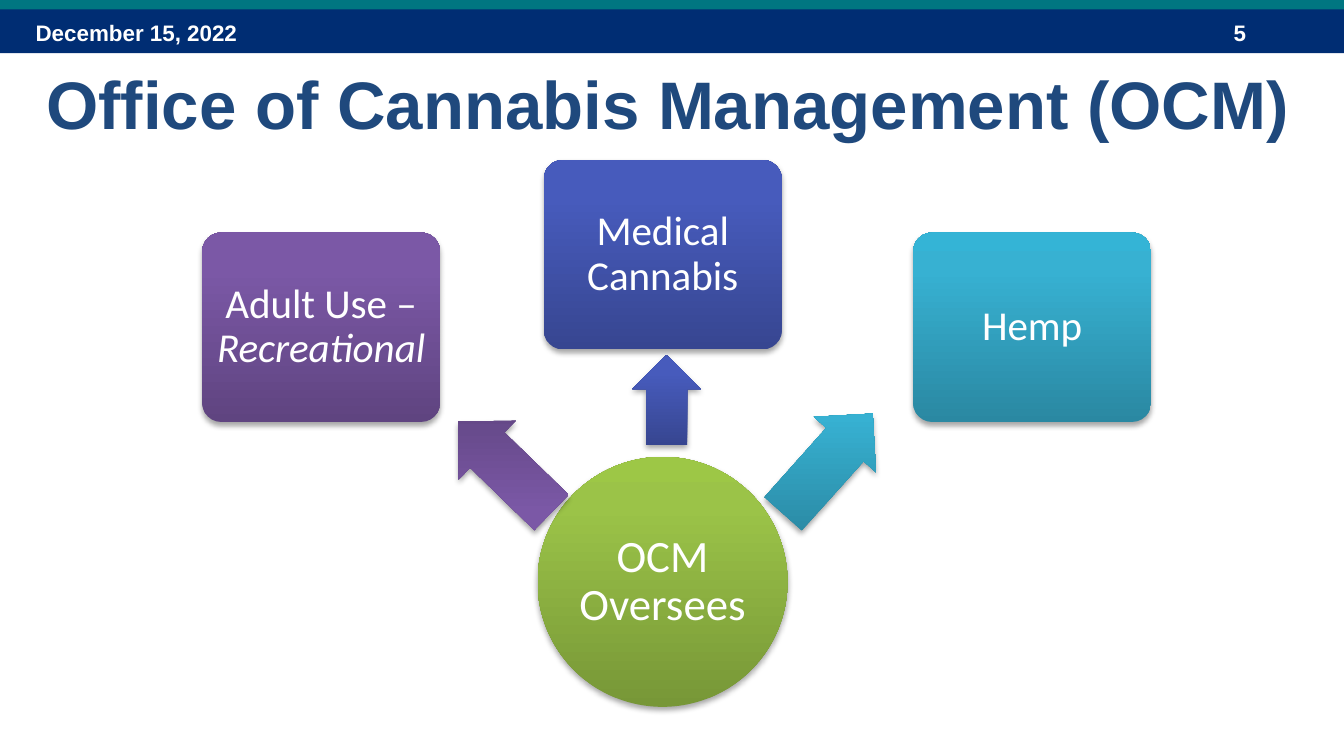
from dataclasses import dataclass

import pptx
import pptx.dml.color
import pptx.enum.shapes
import pptx.enum.text
import pptx.oxml
import pptx.oxml.ns
import pptx.util

SHAPE = pptx.enum.shapes.MSO_SHAPE
ALIGN = pptx.enum.text.PP_ALIGN
ANCHOR = pptx.enum.text.MSO_ANCHOR
NS = pptx.oxml.ns.nsdecls("a")
UPWARD, DOWNWARD = 270, 90


@dataclass(frozen=True)
class Theme:
    navy: str = "002D73"
    teal: str = "007681"
    heading: str = "1F497D"
    white: str = "FFFFFF"
    # Gradients run from the dark end through 80 % to the light end.
    green: tuple = ("779737", "9BC348", "9DC746")
    purple: tuple = ("5F4480", "7B58A6", "7C57A8")
    blue: tuple = ("374691", "475BBC", "455ABF")
    cyan: tuple = ("2A88A2", "37B1D2", "34B4D6")
    heading_font: str = "Arial"
    diagram_font: str = "Calibri"
    title_size: int = 36
    hub_size: int = 24
    branch_size: int = 22
    header_size: int = 12


def write(paragraph, text, *, size, font, color, bold=False, italic=False):
    run = paragraph.add_run()
    run.text = text
    run.font.size = pptx.util.Pt(size)
    run.font.name = font
    run.font.bold = bold
    run.font.italic = italic
    run.font.color.rgb = pptx.dml.color.RGBColor.from_string(color)


class Deck:
    """Places elements on a grid of 100 columns by 56.25 rows of square cells."""

    COLUMNS, ROWS, CELL = 100, 56.25, 0.1

    def __init__(self, theme):
        self.theme = theme
        self.file = pptx.Presentation()
        self.file.slide_width = self.cells(self.COLUMNS)
        self.file.slide_height = self.cells(self.ROWS)
        self.slide = self.file.slides.add_slide(self.file.slide_layouts[5])

    def cells(self, count):
        return pptx.util.Inches(count * self.CELL)

    def area(self, *box):
        return [self.cells(length) for length in box]

    def bar(self, top, height, color):
        band = self.slide.shapes.add_shape(
            SHAPE.RECTANGLE, *self.area(0, top, self.COLUMNS, height))
        band.shadow.inherit = False
        band.fill.solid()
        band.fill.fore_color.rgb = pptx.dml.color.RGBColor.from_string(color)
        band.line.fill.background()

    def header_text(self, text, left, width):
        label = self.slide.shapes.add_textbox(*self.area(left, 0.95, width, 3))
        label.text_frame.word_wrap = True
        label.text_frame.vertical_anchor = ANCHOR.MIDDLE
        write(label.text_frame.paragraphs[0], text, size=self.theme.header_size,
              font=self.theme.heading_font, color=self.theme.white, bold=True)

    def title(self, text):
        heading = self.slide.shapes.title
        heading.left, heading.top, heading.width, heading.height = self.area(
            -0.6, 3.65, 100.6, 7.5)
        frame = heading.text_frame
        frame.auto_size = pptx.enum.text.MSO_AUTO_SIZE.NONE
        frame.vertical_anchor = ANCHOR.BOTTOM
        frame.paragraphs[0].alignment = ALIGN.CENTER
        write(frame.paragraphs[0], text, size=self.theme.title_size,
              font=self.theme.heading_font, color=self.theme.heading, bold=True)

    def glossy(self, kind, box, colors, angle=UPWARD):
        """Add a borderless shape with a gradient and a soft drop shadow."""
        shape = self.slide.shapes.add_shape(kind, *self.area(*box))
        shape.line.fill.background()
        shape.fill.gradient()
        shape.shadow.inherit = False
        stops = "".join(
            f'<a:gs pos="{share * 1000}"><a:srgbClr val="{color}"/></a:gs>'
            for share, color in zip((0, 80, 100), colors))
        properties = shape.element.spPr
        properties.replace(
            properties.find(pptx.oxml.ns.qn("a:gradFill")),
            pptx.oxml.parse_xml(
                f'<a:gradFill {NS} rotWithShape="0"><a:gsLst>{stops}</a:gsLst>'
                f'<a:lin ang="{angle * 60000}" scaled="0"/></a:gradFill>'))
        blur, distance = pptx.util.Pt(3.1), pptx.util.Pt(1.8)
        properties.find(pptx.oxml.ns.qn("a:effectLst")).append(
            pptx.oxml.parse_xml(
                f'<a:outerShdw {NS} blurRad="{blur}" dist="{distance}" '
                'dir="5400000" rotWithShape="0"><a:srgbClr val="000000">'
                '<a:alpha val="35000"/></a:srgbClr></a:outerShdw>'))
        return shape

    def caption(self, shape, parts, size, inset):
        """Centre (text, italic) parts as one paragraph in the shape."""
        frame = shape.text_frame
        frame.word_wrap = True
        frame.vertical_anchor = ANCHOR.MIDDLE
        frame.margin_left = frame.margin_right = pptx.util.Inches(inset)
        frame.margin_top = frame.margin_bottom = pptx.util.Inches(inset)
        paragraph = frame.paragraphs[0]
        paragraph.alignment = ALIGN.CENTER
        paragraph.line_spacing = 0.9
        for text, italic in parts:
            write(paragraph, text, size=size, font=self.theme.diagram_font,
                  color=self.theme.white, italic=italic)

    def hub(self, text, box, colors):
        circle = self.glossy(SHAPE.OVAL, box, colors)
        self.caption(circle, [(text, False)], self.theme.hub_size, 0.02)

    def arrow(self, box, rotation, colors, angle):
        pointer = self.glossy(SHAPE.LEFT_ARROW, box, colors, angle)
        pointer.adjustments[0] = 0.6
        pointer.adjustments[1] = 0.5
        pointer.rotation = rotation

    def branch(self, parts, left, top, colors):
        card = self.glossy(
            SHAPE.ROUNDED_RECTANGLE, (left, top, 17.7, 14.1), colors)
        card.adjustments[0] = 0.1
        self.caption(card, parts, self.theme.branch_size, 0.05)


def main():
    theme = Theme()
    deck = Deck(theme)
    deck.bar(0.67, 3.3, theme.navy)
    deck.header_text("December 15, 2022", 1.67, 23.3)
    deck.header_text("5", 90.8, 7.5)
    deck.bar(-0.2, 0.9, theme.teal)
    deck.title("Office of Cannabis Management (OCM)")
    deck.hub("OCM Oversees", (40, 34, 18.6, 18.6), theme.green)

    branches = [
        ([("Adult Use – ", False), ("Recreational ", True)], 15.05, 17.3,
         theme.purple, (32.7, 31.7, 9.7, 6.1), 44.2, DOWNWARD),
        ([("Medical Cannabis", False)], 40.47, 11.9,
         theme.blue, (46.25, 27.2, 6.7, 5.1), 90, UPWARD),
        ([("Hemp", False)], 67.95, 17.3,
         theme.cyan, (56.6, 31.4, 10, 6.2), 131.8, UPWARD),
    ]
    for parts, left, top, colors, arrow_box, rotation, angle in branches:
        deck.arrow(arrow_box, rotation, colors, angle)
        deck.branch(parts, left, top, colors)
    deck.file.save("out.pptx")


if __name__ == "__main__":
    main()
